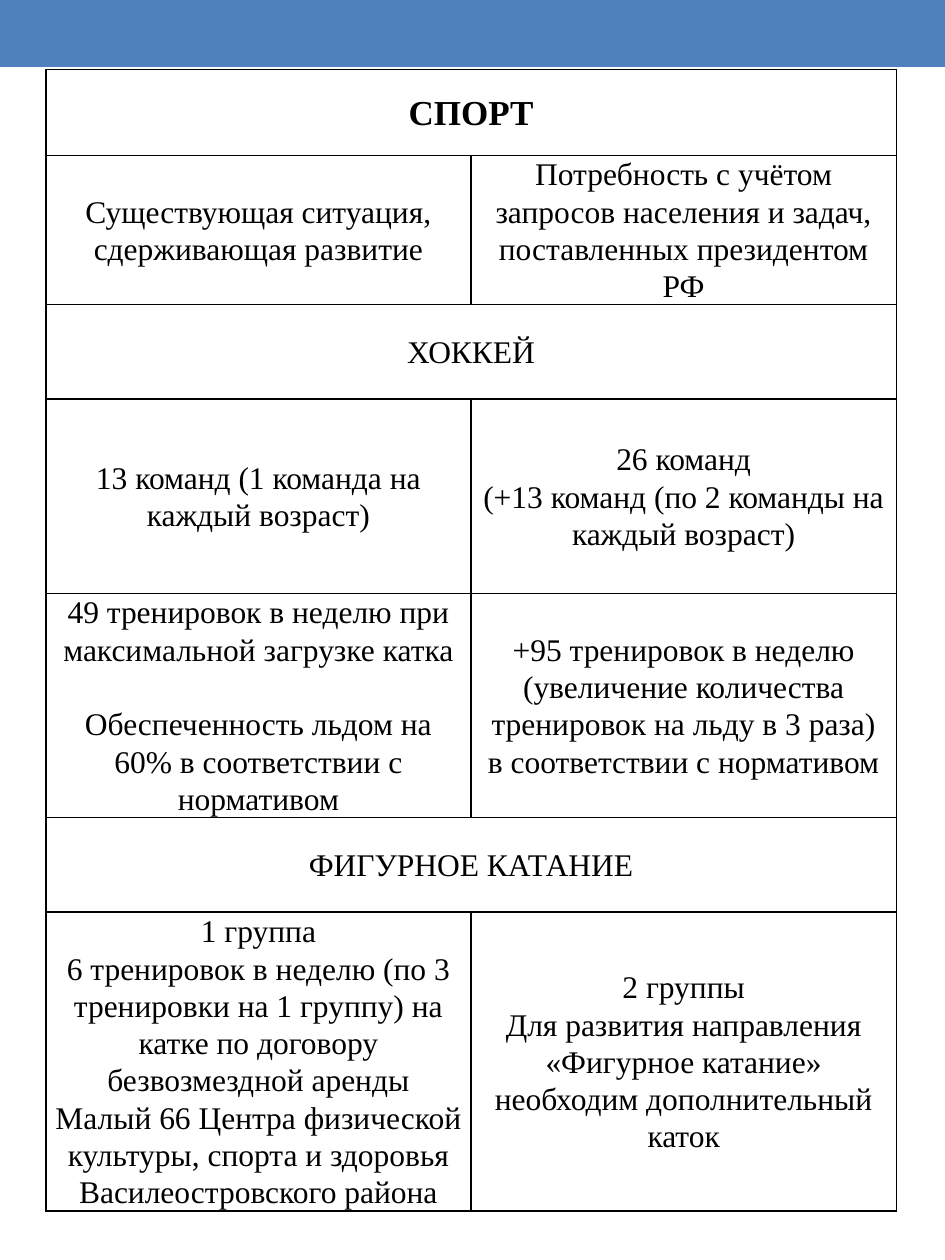
from lxml.etree import SubElement
from pptx import Presentation
from pptx.dml.color import RGBColor
from pptx.enum.shapes import MSO_SHAPE
from pptx.enum.text import MSO_ANCHOR, PP_ALIGN
from pptx.oxml.ns import qn
from pptx.util import Pt

BLACK, WHITE, BLUE = "000000", "FFFFFF", "4F81BD"
BLANK_LINE = 21.3

# Each row: height, then one cell (spanning both columns) or two.
# Each cell is a list of paragraphs.
ROWS = [
    (49, [["СПОРТ"]]),
    (85, [
        ["Существующая ситуация, сдерживающая развитие"],
        ["Потребность с учётом запросов населения и задач, поставленных президентом РФ"],
    ]),
    (54, [["ХОККЕЙ"]]),
    (111, [
        ["13 команд (1 команда на каждый возраст)"],
        ["26 команд", "(+13 команд (по 2 команды на каждый возраст)"],
    ]),
    (128, [
        ["49 тренировок в неделю при максимальной загрузке катка",
         "Обеспеченность льдом на 60% в соответствии с нормативом"],
        ["+95 тренировок в неделю (увеличение количества тренировок на льду в 3 раза)",
         "в соответствии с нормативом"],
    ]),
    (54, [["ФИГУРНОЕ КАТАНИЕ"]]),
    (171, [
        ["1 группа",
         "6 тренировок в неделю (по 3 тренировки на 1 группу) на катке "
         "по договору безвозмездной аренды",
         "Малый 66 Центра физической культуры, спорта и здоровья "
         "Василеостровского района"],
        ["2 группы",
         "Для развития направления «Фигурное катание» необходим дополнительный каток"],
    ]),
]


def color(value):
    return RGBColor.from_string(value)


def apply_format(target, values):
    for name, value in values.items():
        setattr(target, name, value)


def add_band(page, left, top, width, height):
    band = page.shapes.add_shape(
        MSO_SHAPE.RECTANGLE, Pt(left), Pt(top), Pt(width), Pt(height))
    band.shadow.inherit = False
    band.fill.solid()
    band.fill.fore_color.rgb = color(BLUE)
    band.line.fill.background()


def style_cell(cell):
    """Give a cell black borders, a white fill and narrow margins."""
    properties = cell._tc.get_or_add_tcPr()
    for side in ("a:lnL", "a:lnR", "a:lnT", "a:lnB"):
        line = SubElement(properties, qn(side), w=str(Pt(1)))
        fill = SubElement(line, qn("a:solidFill"))
        SubElement(fill, qn("a:srgbClr"), val=BLACK)
    cell.fill.solid()
    cell.fill.fore_color.rgb = color(WHITE)
    apply_format(cell, {
        "vertical_anchor": MSO_ANCHOR.MIDDLE,
        "margin_left": Pt(3.6), "margin_right": Pt(3.6),
        "margin_top": 0, "margin_bottom": 0,
    })


def write_cell(cell, lines, size, bold):
    frame = cell.text_frame
    for index, line in enumerate(lines):
        para = frame.add_paragraph() if index else frame.paragraphs[0]
        apply_format(para, {"alignment": PP_ALIGN.CENTER, "line_spacing": 1.07})
        span = para.add_run()
        span.text = line
        apply_format(span.font, {
            "name": "Times New Roman", "size": Pt(size), "bold": bold})
        span.font.color.rgb = color(BLACK)


def add_sport_table(page, left, top, width):
    height = sum(row_height for row_height, _ in ROWS)
    table = page.shapes.add_table(
        len(ROWS), 2, Pt(left), Pt(top), Pt(width), Pt(height)).table
    apply_format(table, {"first_row": False, "horz_banding": False})
    for column in table.columns:
        column.width = Pt(width / 2)
    for index, (row_height, texts) in enumerate(ROWS):
        row = table.rows[index]
        row.height = Pt(row_height)
        for cell in row.cells:
            style_cell(cell)
        if len(texts) == 1:
            row.cells[0].merge(row.cells[1])
        heading = index == 0
        for cell, lines in zip(row.cells, texts):
            write_cell(cell, lines, 20 if heading else 18, heading)
    supply = table.cell(4, 0).text_frame.paragraphs[1]
    supply.space_before = Pt(BLANK_LINE)


def main():
    deck = Presentation()
    apply_format(deck, {"slide_width": Pt(540), "slide_height": Pt(720)})
    page = deck.slides.add_slide(deck.slide_layouts[6])
    add_band(page, 0, 0, 540, 38.2)
    add_sport_table(page, 26.2, 39.8, 486)
    deck.save("out.pptx")


if __name__ == "__main__":
    main()
